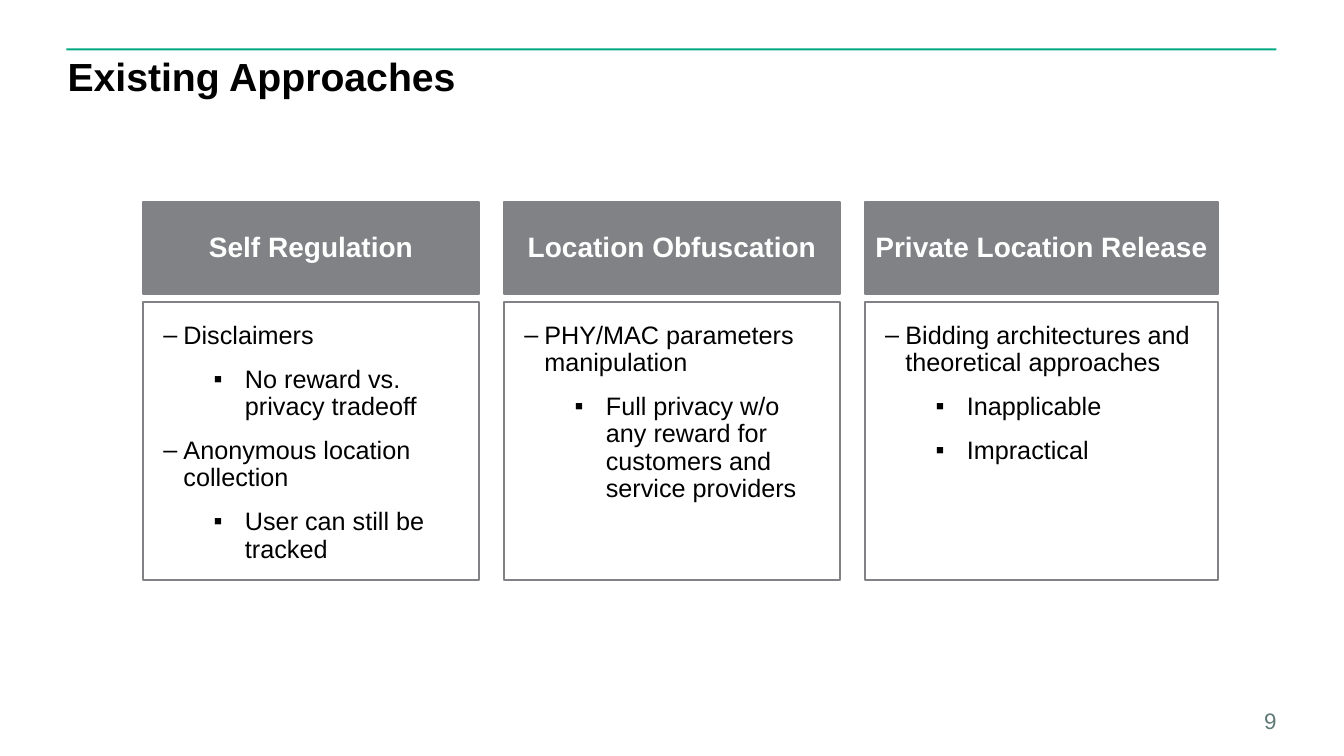
from lxml import etree
from pptx import Presentation
from pptx.dml.color import RGBColor
from pptx.enum.shapes import MSO_SHAPE
from pptx.enum.text import MSO_ANCHOR, PP_ALIGN
from pptx.oxml.ns import qn
from pptx.util import Inches, Pt

RECTANGLE = MSO_SHAPE.RECTANGLE
TOP, MIDDLE, BOTTOM = MSO_ANCHOR.TOP, MSO_ANCHOR.MIDDLE, MSO_ANCHOR.BOTTOM
LEFT, CENTER, RIGHT = PP_ALIGN.LEFT, PP_ALIGN.CENTER, PP_ALIGN.RIGHT

TITLE = "Existing Approaches"
PAGE_NUMBER = "9"
APPROACHES = [
    ("Self Regulation", 3.33, [
        (0, "Disclaimers"),
        (1, "No reward vs. privacy tradeoff"),
        (0, "Anonymous location collection"),
        (1, "User can still be tracked"),
    ]),
    ("Location Obfuscation", 3.33, [
        (0, "PHY/MAC parameters manipulation"),
        (1, "Full privacy w/o any reward for customers and service providers"),
    ]),
    ("Private Location Release", 3.5, [
        (0, "Bidding architectures and theoretical approaches"),
        (1, "Inapplicable"),
        (1, "Impractical"),
    ]),
]
BULLETS = [("–", 0.2, 0.2), ("▪", 0.81, 0.31)]

GREEN, GRAY, SLATE = "01A982", "808285", "5F7A76"
BLACK, WHITE = "000000", "FFFFFF"
TITLE_FONT = {"name": "Arial", "size": Pt(28), "bold": True}
HEADER_FONT = {"name": "Arial", "size": Pt(20), "bold": True}
BODY_FONT = {"name": "Arial", "size": Pt(18), "bold": False}
NUMBER_FONT = {"name": "Arial", "size": Pt(16), "bold": False}
HEADER_LAYOUT = {"alignment": CENTER, "line_spacing": 0.9}
BODY_LAYOUT = {"alignment": LEFT, "line_spacing": 0.9, "space_before": Pt(12)}

COLUMNS_LEFT, COLUMN_GAP = 1.42, 0.25
HEADER_TOP, HEADER_HEIGHT = 2, 0.92
BODY_TOP, BODY_HEIGHT = 3, 2.75


def set_color(color_format, value):
    color_format.rgb = RGBColor.from_string(value)


def set_attributes(target, values):
    for name, value in values.items():
        setattr(target, name, value)


def add_box(slide, place, fill=None, line=None):
    shape = slide.shapes.add_shape(RECTANGLE, *map(Inches, place))
    shape.shadow.inherit = False
    if fill:
        shape.fill.solid()
        set_color(shape.fill.fore_color, fill)
    else:
        shape.fill.background()
    if line:
        set_color(shape.line.color, line)
        shape.line.width = Pt(1.5)
    else:
        shape.line.fill.background()
    return shape


def prepare_frame(shape, anchor, horizontal, vertical):
    frame = shape.text_frame
    set_attributes(frame, {
        "word_wrap": True,
        "vertical_anchor": anchor,
        "margin_left": Inches(horizontal),
        "margin_right": Inches(horizontal),
        "margin_top": Inches(vertical),
        "margin_bottom": Inches(vertical),
    })
    return frame


def write(paragraph, text, font, color, layout):
    run = paragraph.add_run()
    run.text = text
    set_attributes(run.font, font)
    set_color(run.font.color, color)
    set_attributes(paragraph, layout)


def add_bullet(paragraph, level):
    character, margin, hanging = BULLETS[level]
    paragraph.level = level
    properties = paragraph._p.get_or_add_pPr()
    properties.set("marL", str(Inches(margin)))
    properties.set("indent", str(-Inches(hanging)))
    etree.SubElement(properties, qn("a:buFont")).set("typeface", "Arial")
    etree.SubElement(properties, qn("a:buChar")).set("char", character)


def add_label(slide, place, text, anchor, font, color, layout):
    shape = slide.shapes.add_textbox(*map(Inches, place))
    frame = prepare_frame(shape, anchor, 0, 0)
    write(frame.paragraphs[0], text, font, color, layout)


def add_approach(slide, left, width, heading, points):
    header = add_box(slide, (left, HEADER_TOP, width, HEADER_HEIGHT), GRAY, GRAY)
    frame = prepare_frame(header, MIDDLE, 0.1, 0.05)
    write(frame.paragraphs[0], heading, HEADER_FONT, WHITE, HEADER_LAYOUT)

    body = add_box(slide, (left, BODY_TOP, width, BODY_HEIGHT), line=GRAY)
    frame = prepare_frame(body, TOP, 0.2, 0.2)
    for index, (level, text) in enumerate(points):
        paragraph = frame.add_paragraph() if index else frame.paragraphs[0]
        write(paragraph, text, BODY_FONT, BLACK, BODY_LAYOUT)
        add_bullet(paragraph, level)


def main():
    presentation = Presentation()
    presentation.slide_width = Inches(13.33)
    presentation.slide_height = Inches(7.5)
    slide = presentation.slides.add_slide(presentation.slide_layouts[6])

    add_box(slide, (0.66, 0.48, 12, 0.02), GREEN)
    add_label(slide, (0.67, 0.57, 12, 0.93), TITLE, TOP, TITLE_FONT, BLACK,
              {"alignment": LEFT, "line_spacing": 0.9})
    left = COLUMNS_LEFT
    for heading, width, points in APPROACHES:
        add_approach(slide, left, width, heading, points)
        left += width + COLUMN_GAP
    add_label(slide, (12.08, 7.03, 0.58, 0.25), PAGE_NUMBER, BOTTOM,
              NUMBER_FONT, SLATE, {"alignment": RIGHT})

    presentation.save("out.pptx")


if __name__ == "__main__":
    main()
